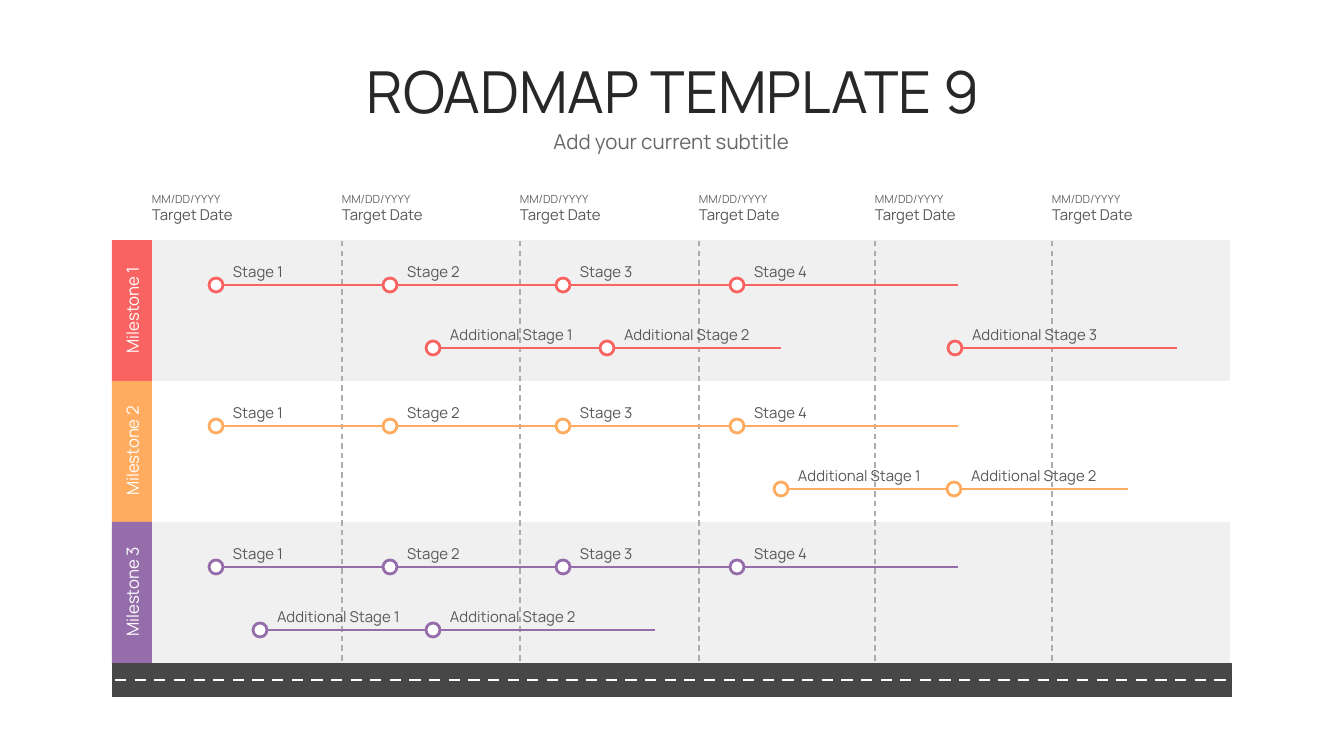
from dataclasses import dataclass

from lxml import etree
from pptx import Presentation
from pptx.dml.color import RGBColor
from pptx.enum.dml import MSO_LINE_DASH_STYLE as Dash
from pptx.enum.shapes import MSO_CONNECTOR as Conn, MSO_SHAPE as Shape
from pptx.enum.text import MSO_AUTO_SIZE as AutoSize, PP_ALIGN as Align
from pptx.oxml.ns import qn
from pptx.util import Pt

# Content
TITLE = "ROADMAP TEMPLATE 9"
SUBTITLE = "Add your current subtitle"
DATES = [(x, "MM/DD/YYYY", "Target Date") for x in (152, 342, 520, 699, 875, 1052)]
STAGES = ["Stage 1", "Stage 2", "Stage 3", "Stage 4"]
EXTRAS = ["Additional Stage 1", "Additional Stage 2", "Additional Stage 3"]


@dataclass(frozen=True)
class Theme:
    font: str = "Manrope"
    title: str = "272727"
    muted: str = "686868"
    text: str = "585858"
    white: str = "FFFFFF"
    band: str = "F0F0F0"
    late_dot: str = "EEEEEE"
    road: str = "474747"
    guide: str = "ACACAC"
    title_size: int = 31
    subtitle_size: int = 11
    milestone_size: int = 9
    label_size: int = 8
    date_size: int = 6


T = Theme()

# Each track: labels, dot centres, line end, dot fill
MILESTONES = [
    ("Milestone 1", "F96361", True, [(EXTRAS[:2], (433, 607), 781, T.white),
                                     (EXTRAS[2:], (955,), 1177, T.late_dot)]),
    ("Milestone 2", "FFAC60", False, [(EXTRAS[:2], (781, 954), 1128, T.white)]),
    ("Milestone 3", "956DAA", True, [(EXTRAS[:2], (260, 433), 655, T.white)]),
]
MAIN_TRACK = (STAGES, (216, 390, 563, 737), 958, T.white)

# Layout in px
SCALE = 914400 / 134.4
LEFT, RIGHT, TAB_W = 112, 1230, 40
TOP, ROW_H = 240, 141
MAIN_DY, EXTRA_DY = 45, 108
DOT, ROAD_Y = 14, 680


def px(n):
    return round(n * SCALE)


def rgb(color):
    return RGBColor.from_string(color)


def text(s, x, y, w, h, words, size, color, align=Align.LEFT):
    box = s.shapes.add_textbox(px(x), px(y), px(w), px(h))
    tf = box.text_frame
    tf.word_wrap = True
    tf.auto_size = AutoSize.SHAPE_TO_FIT_TEXT
    tf.margin_left = tf.margin_right = tf.margin_top = tf.margin_bottom = 0
    p = tf.paragraphs[0]
    p.text, p.alignment = words, align
    p.font.name, p.font.size, p.font.color.rgb = T.font, Pt(size), rgb(color)
    return box


def shape(s, kind, x, y, w, h, fill, line=None):
    sp = s.shapes.add_shape(kind, px(x), px(y), px(w), px(h))
    sp.shadow.inherit = False
    sp.fill.solid()
    sp.fill.fore_color.rgb = rgb(fill)
    if line:
        sp.line.color.rgb, sp.line.width = rgb(line), Pt(1.5)
    else:
        sp.line.fill.background()


def line(s, x1, y1, x2, y2, color, width=1.5, dash=None):
    c = s.shapes.add_connector(Conn.STRAIGHT, px(x1), px(y1), px(x2), px(y2))
    c.line.color.rgb, c.line.width = rgb(color), Pt(width)
    if dash:
        c.line.dash_style = dash
    etree.SubElement(c._element.spPr, qn("a:effectLst"))


def track(s, y, color, labels, centres, end, fill):
    stops = [x - DOT / 2 for x in centres[1:]] + [end]
    for label, x, stop in zip(labels, centres, stops):
        line(s, x + DOT / 2, y, stop, y, color)
        shape(s, Shape.OVAL, x - DOT / 2, y - DOT / 2, DOT, DOT, fill, color)
        text(s, x + 17, y - 22, 150, 17, label, T.label_size, T.text)


prs = Presentation()
prs.slide_width, prs.slide_height = px(1344), px(756)
s = prs.slides.add_slide(prs.slide_layouts[6])

# Heading
text(s, 249, 56, 848, 70, TITLE, T.title_size, T.title, Align.CENTER)
text(s, 379, 129, 585, 26, SUBTITLE, T.subtitle_size, T.muted, Align.CENTER)

# Milestone bands and tabs
for row, (name, color, shaded, _) in enumerate(MILESTONES):
    y = TOP + row * ROW_H
    if shaded:
        shape(s, Shape.RECTANGLE, LEFT + TAB_W, y, RIGHT - LEFT - TAB_W, ROW_H, T.band)
    shape(s, Shape.RECTANGLE, LEFT, y, TAB_W, ROW_H, color)
    tab = text(s, 67, y + 60, 130, 20, name, T.milestone_size, T.white, Align.CENTER)
    tab.rotation = 270

# Road
line(s, LEFT, ROAD_Y, 1232, ROAD_Y, T.road, 18)
line(s, LEFT + 3, ROAD_Y, 1232, ROAD_Y, T.white, 1.5, Dash.DASH)

# Date columns, with a guide after the first
for i, (x, date, caption) in enumerate(DATES):
    text(s, x, 192, 147, 13, date, T.date_size, T.muted)
    text(s, x, 206, 147, 17, caption, T.label_size, T.text)
    if i:
        line(s, x, TOP + 1, x, 664, T.guide, 0.75, Dash.DASH)

# Stage tracks
for row, (_, color, _, extras) in enumerate(MILESTONES):
    y = TOP + row * ROW_H
    track(s, y + MAIN_DY, color, *MAIN_TRACK)
    for extra in extras:
        track(s, y + EXTRA_DY, color, *extra)

prs.save("out.pptx")
